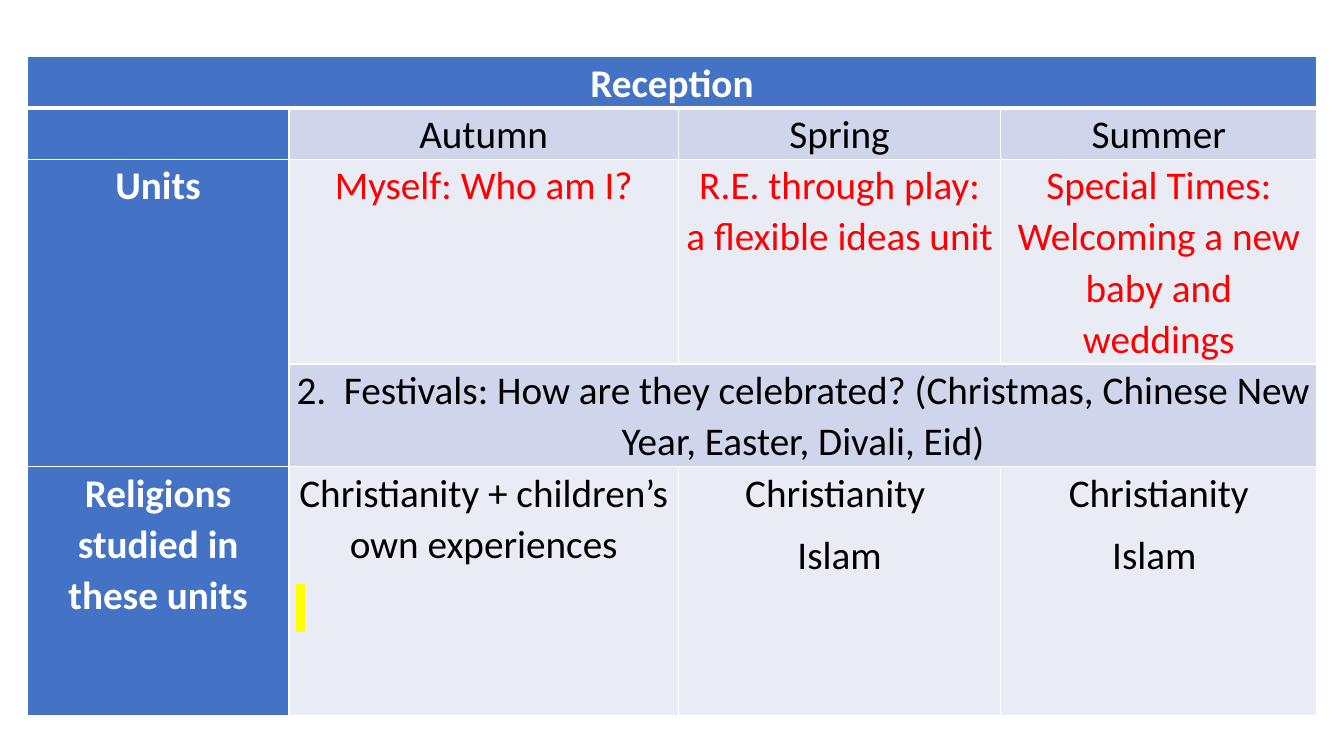
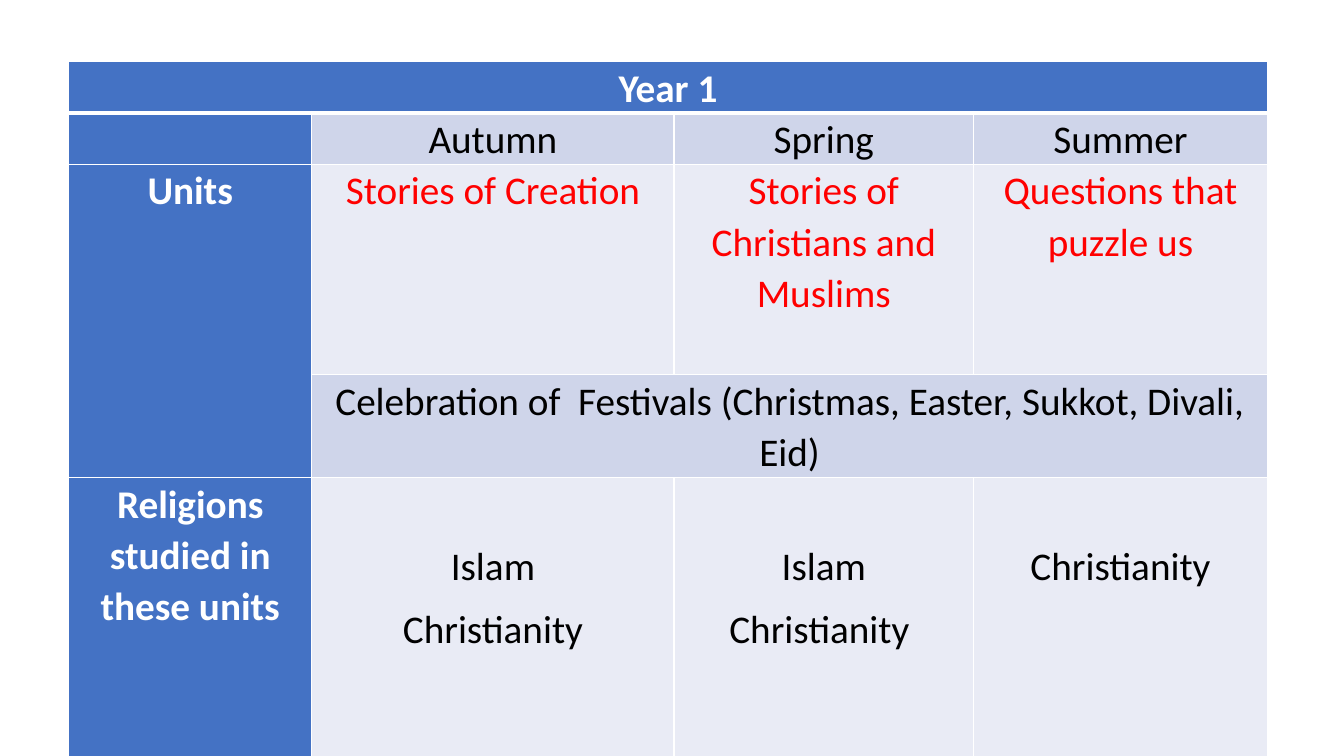
import pptx
import pptx.dml.color
import pptx.enum.text
import pptx.oxml
import pptx.oxml.ns
import pptx.util

SLIDE_WIDTH, SLIDE_HEIGHT = 13.33, 7.5
BLUE, BAND, PALE = "4472C4", "CFD5EA", "E9EBF5"
WHITE, BLACK, RED, YELLOW = "FFFFFF", "000000", "FF0000", "FFFF00"
COLUMN_PERCENTS = (20.3, 30.2, 25, 24.5)
TERMS = ("Autumn", "Spring", "Summer")
MARK = " "  # a no-break space, shown as a yellow mark


def colour(hex_text):
    return pptx.dml.color.RGBColor.from_string(hex_text)


def inches(length):
    return pptx.util.Inches(length)


class Planner:
    font, size = "Calibri", 28
    line_height = 0.51
    side_margin = 0.07
    paragraph_gap = 8

    def __init__(self):
        self.deck = pptx.Presentation()
        self.deck.slide_width = inches(SLIDE_WIDTH)
        self.deck.slide_height = inches(SLIDE_HEIGHT)
        self.slide = None

    def add_slide(self):
        self.slide = self.deck.slides.add_slide(self.deck.slide_layouts[6])

    def grid(self, left, top, width, row_heights):
        """Add a table whose columns share the width by COLUMN_PERCENTS."""
        frame = self.slide.shapes.add_table(
            len(row_heights), len(COLUMN_PERCENTS),
            inches(left), inches(top), inches(width), inches(sum(row_heights)))
        table = frame.table
        table.first_row = table.horz_banding = False
        for column, percent in zip(table.columns, COLUMN_PERCENTS):
            column.width = inches(width * percent / 100)
        for row, height in zip(table.rows, row_heights):
            row.height = inches(height)
        for index, row in enumerate(table.rows):
            for cell in row.cells:
                self.borders(cell, top=3 if index == 1 else 1,
                             bottom=3 if index == 0 else 1)
        return table

    def borders(self, cell, top, bottom):
        properties = cell._tc.get_or_add_tcPr()
        for side, points in (("L", 1), ("R", 1), ("T", top), ("B", bottom)):
            properties.append(pptx.oxml.parse_xml(
                f'<a:ln{side} {pptx.oxml.ns.nsdecls("a")} w="{pptx.util.Pt(points)}">'
                f'<a:solidFill><a:srgbClr val="{WHITE}"/></a:solidFill></a:ln{side}>'))

    def fill(self, cell, fill):
        cell.fill.solid()
        cell.fill.fore_color.rgb = colour(fill)

    def cell_text(self, cell, lines, ink=BLACK, bold=False, skip=0):
        """Add one paragraph per line, starting after skip empty line heights."""
        gap = self.line_height + self.paragraph_gap / 72
        cell.margin_left = cell.margin_right = inches(self.side_margin)
        cell.margin_top, cell.margin_bottom = inches(skip * gap), 0
        box = cell.text_frame
        for index, line in enumerate(lines):
            para = box.add_paragraph() if index else box.paragraphs[0]
            para.line_spacing = 1.07
            para.space_after = pptx.util.Pt(self.paragraph_gap)
            align = pptx.enum.text.PP_ALIGN
            para.alignment = align.LEFT if line == MARK else align.CENTER
            span = para.add_run()
            span.text = line
            span.font.name, span.font.size = self.font, pptx.util.Pt(self.size)
            span.font.bold = bold
            span.font.color.rgb = colour(ink)
            if line == MARK:
                self.highlight(span)

    def highlight(self, span):
        ink = span._r.rPr.find(pptx.oxml.ns.qn("a:solidFill"))
        ink.addnext(pptx.oxml.parse_xml(
            f'<a:highlight {pptx.oxml.ns.nsdecls("a")}>'
            f'<a:srgbClr val="{YELLOW}"/></a:highlight>'))

    def year_plan(self, place, row_heights, year, units, festivals, religions, skip=0):
        """Add a slide with one year's units and religions for each term."""
        self.add_slide()
        table = self.grid(*place, row_heights)
        for index, band in enumerate((BLUE, BAND, PALE, BAND, PALE)):
            for column in range(len(COLUMN_PERCENTS)):
                self.fill(table.cell(index, column), band if column else BLUE)
        table.cell(0, 0).merge(table.cell(0, 3))
        table.cell(2, 0).merge(table.cell(3, 0))
        table.cell(3, 1).merge(table.cell(3, 3))

        headings = ((0, year), (2, "Units"), (4, "Religions studied in these units"))
        for row, heading in headings:
            self.cell_text(table.cell(row, 0), [heading], WHITE, bold=True)
        for column, (term, unit, faiths) in enumerate(zip(TERMS, units, religions), 1):
            self.cell_text(table.cell(1, column), [term])
            self.cell_text(table.cell(2, column), [unit], RED)
            self.cell_text(table.cell(4, column), faiths, skip=skip)
        self.cell_text(table.cell(3, 1), [festivals])


def main():
    planner = Planner()
    planner.year_plan(
        (0.27, 0.56, 12.79), (0.5, 0.51, 2.03, 1.02, 2.47), "Reception",
        ("Myself: Who am I?",
         "R.E. through play: a flexible ideas unit",
         "Special Times: Welcoming a new baby and weddings"),
        "2.  Festivals: How are they celebrated? "
        "(Christmas, Chinese New Year, Easter, Divali, Eid)",
        (("Christianity + children’s own experiences", MARK),
         ("Christianity ", "Islam"),
         ("Christianity", "Islam ")))
    planner.year_plan(
        (0.68, 0.61, 11.89), (0.5, 0.51, 2.09, 1.02, 2.77), "Year 1",
        ("Stories of Creation",
         "Stories of Christians and Muslims",
         "Questions that puzzle us"),
        "Celebration of  Festivals (Christmas, Easter, Sukkot, Divali, Eid)",
        (("Islam", "Christianity"),
         ("Islam", "Christianity "),
         ("Christianity",)),
        skip=1)
    planner.deck.save("out.pptx")


if __name__ == "__main__":
    main()
